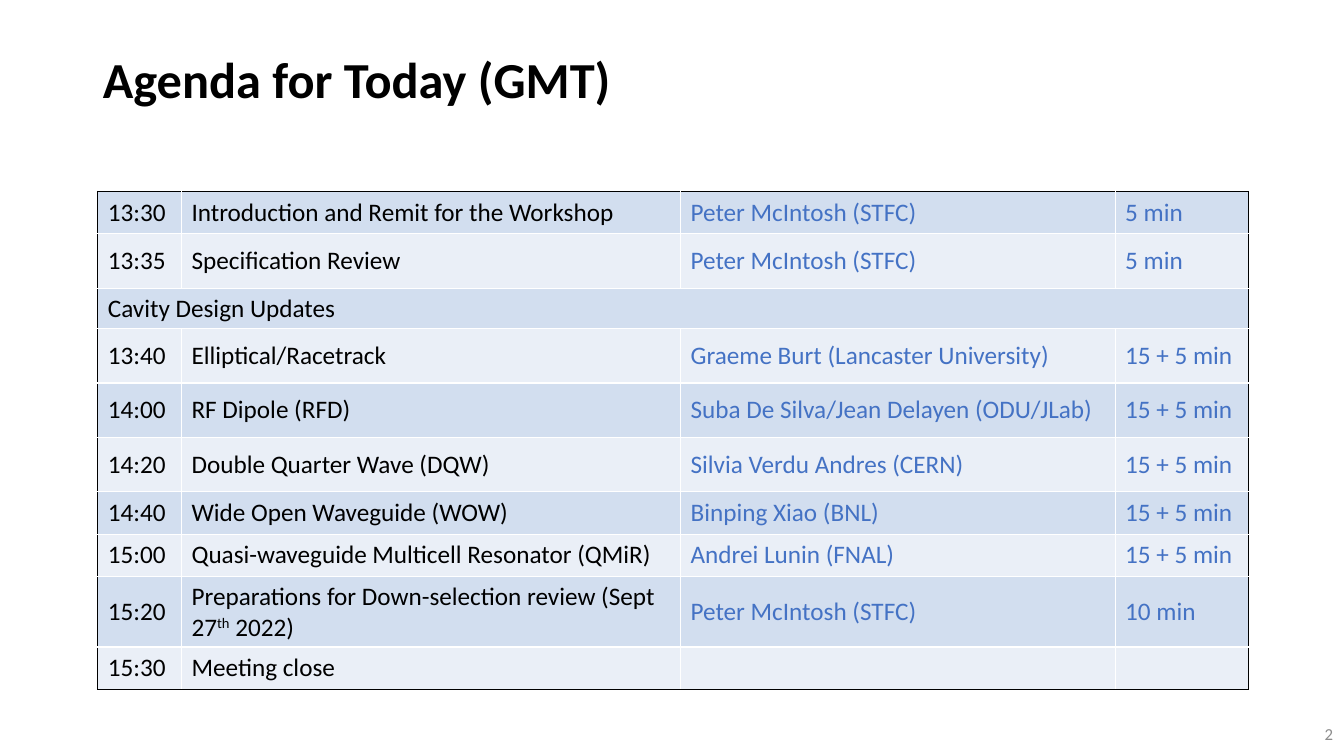
from dataclasses import dataclass

from lxml import etree
from pptx import Presentation
from pptx.dml.color import RGBColor
from pptx.enum import text as t
from pptx.oxml import ns
from pptx.util import Inches, Pt

BLACK, WHITE, BLUE, GREY = "000000", "FFFFFF", "4472C4", "8C8C8C"
BANDS = ("D2DEEF", "EAEFF7")
COLUMN_WIDTHS = (0.83, 4.95, 4.31, 1.32)


@dataclass
class Session:
    start: str
    topic: str = ""
    speaker: str = ""
    duration: str = ""
    height: float = 0.42

    @property
    def is_heading(self) -> bool:
        return not self.topic


AGENDA = (
    Session("13:30", "Introduction and Remit for the Workshop", "Peter McIntosh (STFC)", "5 min"),
    Session("13:35", "Specification Review", "Peter McIntosh (STFC)", "5 min", 0.54),
    Session("Cavity Design Updates", height=0.31),
    Session("13:40", "Elliptical/Racetrack", "Graeme Burt (Lancaster University)", "15 + 5 min", 0.54),
    Session("14:00", "RF Dipole (RFD)", "Suba De Silva/Jean Delayen (ODU/JLab)", "15 + 5 min", 0.54),
    Session("14:20", "Double Quarter Wave (DQW)", "Silvia Verdu Andres (CERN)", "15 + 5 min", 0.54),
    Session("14:40", "Wide Open Waveguide (WOW)", "Binping Xiao (BNL)", "15 + 5 min"),
    Session("15:00", "Quasi-waveguide Multicell Resonator (QMiR)", "Andrei Lunin (FNAL)", "15 + 5 min"),
    Session("15:20", "Preparations for Down-selection review (Sept 27^th^ 2022)",
            "Peter McIntosh (STFC)", "10 min"),
    Session("15:30", "Meeting close"),
)


def rgb(value: str) -> RGBColor:
    return RGBColor.from_string(value)


def write(frame, content: str, *, size: float = 18, color: str = BLACK, bold: bool = False,
          align=t.PP_ALIGN.LEFT, line_spacing: float = 1.0) -> None:
    """Write one paragraph; text between carets is superscript."""
    para = frame.paragraphs[0]
    para.alignment = align
    para.line_spacing = line_spacing
    for index, piece in enumerate(content.split("^")):
        span = para.add_run()
        span.text = piece
        span.font.name = "Calibri"
        span.font.size = Pt(size)
        span.font.bold = bold
        span.font.color.rgb = rgb(color)
        if index % 2:
            span.font._element.set("baseline", "30000")


def add_borders(cell, colors: dict[str, str]) -> None:
    properties = cell._tc.get_or_add_tcPr()
    for side, color in colors.items():
        line = etree.SubElement(properties, ns.qn(f"a:ln{side}"), w=str(Pt(1)))
        fill = etree.SubElement(line, ns.qn("a:solidFill"))
        etree.SubElement(fill, ns.qn("a:srgbClr"), val=color)


def add_agenda(page) -> None:
    last_row, last_column = len(AGENDA) - 1, len(COLUMN_WIDTHS) - 1
    holder = page.shapes.add_table(len(AGENDA), len(COLUMN_WIDTHS),
                                   Inches(0.97), Inches(1.9), Inches(11.41), Inches(4.93))
    table = holder.table
    table.first_row = table.horz_banding = False
    for column, width in zip(table.columns, COLUMN_WIDTHS):
        column.width = Inches(width)

    for r, session in enumerate(AGENDA):
        table.rows[r].height = Inches(session.height)
        if session.is_heading:
            table.cell(r, 0).merge(table.cell(r, last_column))
        entries = (session.start, session.topic, session.speaker, session.duration)
        for c, entry in enumerate(entries):
            cell = table.cell(r, c)
            if cell.is_spanned and c < last_column:
                continue
            at_right = c == last_column or cell.is_merge_origin
            outer = {"L": c == 0, "R": at_right, "T": r == 0, "B": r == last_row}
            if cell.is_spanned:
                del outer["L"]
            add_borders(cell, {side: BLACK if edge else WHITE for side, edge in outer.items()})
            cell.fill.solid()
            cell.fill.fore_color.rgb = rgb(BANDS[r % 2])
            cell.vertical_anchor = t.MSO_ANCHOR.MIDDLE
            if entry:
                write(cell.text_frame, entry, color=BLACK if c < 2 else BLUE)
    holder.height = Inches(4.93)


def main() -> None:
    deck = Presentation()
    deck.slide_width, deck.slide_height = Inches(13.33), Inches(7.5)
    page = deck.slides.add_slide(deck.slide_layouts[5])

    title = page.shapes.title
    title.left, title.top, title.width, title.height = map(Inches, (0.92, 0.4, 11.5, 0.84))
    title.text_frame.vertical_anchor = t.MSO_ANCHOR.MIDDLE
    write(title.text_frame, "Agenda for Today (GMT)", size=36, bold=True, line_spacing=0.9)

    number = page.shapes.add_textbox(Inches(10.32), Inches(7.08), Inches(3), Inches(0.4))
    number.text_frame.word_wrap = True
    number.text_frame.vertical_anchor = t.MSO_ANCHOR.MIDDLE
    write(number.text_frame, "2", size=12, color=GREY, align=t.PP_ALIGN.RIGHT)

    add_agenda(page)
    deck.save("out.pptx")


if __name__ == "__main__":
    main()
